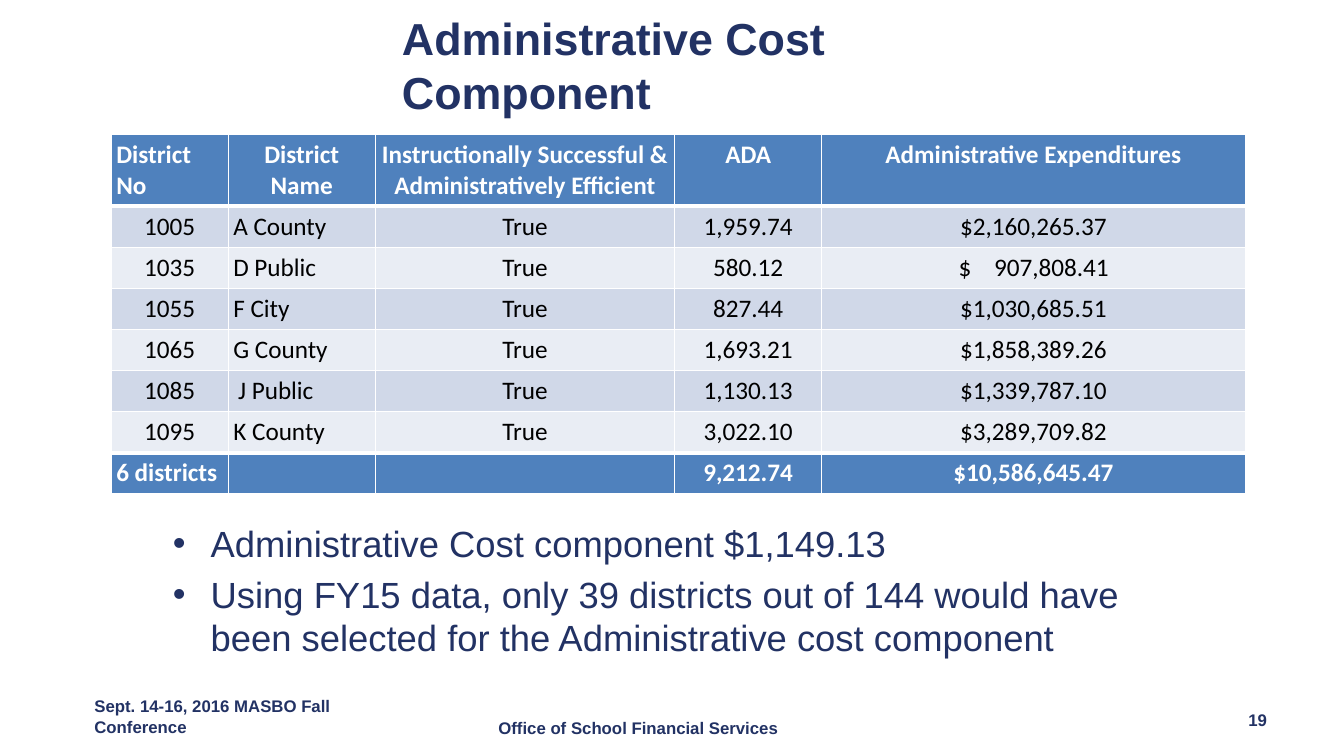
from dataclasses import dataclass

from lxml import etree
from pptx import Presentation
from pptx.dml.color import RGBColor
from pptx.enum.text import MSO_ANCHOR, PP_ALIGN
from pptx.oxml.ns import qn
from pptx.util import Cm, Pt

LEFT, CENTER, RIGHT = PP_ALIGN.LEFT, PP_ALIGN.CENTER, PP_ALIGN.RIGHT
TOP, MIDDLE = MSO_ANCHOR.TOP, MSO_ANCHOR.MIDDLE


@dataclass(frozen=True)
class Theme:
    navy: str = "223264"
    blue: str = "4F81BD"
    band_dark: str = "D0D8E8"
    band_light: str = "E9EDF4"
    white: str = "FFFFFF"
    black: str = "000000"
    heading_font: str = "Arial"
    table_font: str = "Calibri"
    title_size: int = 32
    body_size: int = 26
    table_size: int = 18
    footer_size: int = 12
    thin_rule: int = 1
    thick_rule: int = 3


HEADER = ["District No", "District Name",
          "Instructionally Successful & Administratively Efficient",
          "ADA", "Administrative Expenditures"]
DISTRICTS = [
    ["1005", "A County", "True", "1,959.74", "$2,160,265.37"],
    ["1035", "D Public", "True", "580.12", "$\t907,808.41"],
    ["1055", "F City", "True", "827.44", "$1,030,685.51"],
    ["1065", "G County", "True", "1,693.21", "$1,858,389.26"],
    ["1085", "J Public", "True", "1,130.13", "$1,339,787.10"],
    ["1095", "K County", "True", "3,022.10", "$3,289,709.82"],
]
TOTAL = ["6 districts", "", "", "9,212.74", "$10,586,645.47"]
COLUMN_WIDTHS = [2.95, 3.71, 7.54, 3.71, 10.67]
HEADER_HEIGHT, ROW_HEIGHT = 1.8, 1.03
CELL_INSET, WIDE_INSET = 0.13, 0.25
AMOUNT_INSET, AMOUNT_TAB = 3.45, 0.89


def write(paragraph, text, *, font, size, color, bold=False, align=LEFT,
          before=0, hanging=None, tab=None):
    """Fill one paragraph; hanging (cm) makes it a bullet, tab (cm) sets a stop."""
    paragraph.text = text
    paragraph.alignment = align
    paragraph.space_before = Pt(before)
    properties = paragraph._p.get_or_add_pPr()
    if hanging:
        properties.set("marL", str(Cm(hanging)))
        properties.set("indent", str(-Cm(hanging)))
        etree.SubElement(properties, qn("a:buFont"), typeface=font)
        etree.SubElement(properties, qn("a:buChar"), char="•")
    if tab:
        stops = etree.SubElement(properties, qn("a:tabLst"))
        etree.SubElement(stops, qn("a:tab"), pos=str(Cm(tab)), algn="l")
    paragraph.font.name = font
    paragraph.font.size = Pt(size)
    paragraph.font.bold = bold
    paragraph.font.color.rgb = RGBColor.from_string(color)


class SlideBuilder:
    def __init__(self, slide, theme):
        self.slide = slide
        self.theme = theme

    def text(self, left, top, width, height, lines, *, anchor=TOP, gap=0,
             **style):
        box = self.slide.shapes.add_textbox(Cm(left), Cm(top), Cm(width), Cm(height))
        frame = box.text_frame
        frame.word_wrap = True
        frame.vertical_anchor = anchor
        for index, line in enumerate(lines):
            paragraph = frame.add_paragraph() if index else frame.paragraphs[0]
            write(paragraph, line, before=gap if index else 0,
                  font=self.theme.heading_font, color=self.theme.navy, **style)

    def footer(self, left, top, line, align=LEFT):
        self.text(left, top, 7.9, 1.4, [line], anchor=MIDDLE, align=align,
                  size=self.theme.footer_size, bold=True)

    def borders(self, cell, **widths):
        """Draw white cell edges, with widths in points by side."""
        properties = cell._tc.get_or_add_tcPr()
        for position, side in enumerate("LRTB"):
            width = widths.get(side, self.theme.thin_rule)
            edge = etree.Element(qn(f"a:ln{side}"), w=str(Pt(width)))
            fill = etree.SubElement(edge, qn("a:solidFill"))
            etree.SubElement(fill, qn("a:srgbClr"), val=self.theme.white)
            properties.insert(position, edge)

    def cell(self, cell, value, *, fill, edges, inset=CELL_INSET, **style):
        cell.margin_left = Cm(inset)
        cell.margin_right = cell.margin_top = cell.margin_bottom = Cm(CELL_INSET)
        cell.fill.solid()
        cell.fill.fore_color.rgb = RGBColor.from_string(fill)
        self.borders(cell, **edges)
        write(cell.text_frame.paragraphs[0], value, font=self.theme.table_font,
              size=self.theme.table_size, **style)

    def district_table(self, left, top):
        theme = self.theme
        rows = [HEADER, *DISTRICTS, TOTAL]
        last = len(rows) - 1
        height = HEADER_HEIGHT + last * ROW_HEIGHT
        table = self.slide.shapes.add_table(
            len(rows), len(HEADER), Cm(left), Cm(top),
            Cm(sum(COLUMN_WIDTHS)), Cm(height)).table
        for column, width in zip(table.columns, COLUMN_WIDTHS):
            column.width = Cm(width)
        for r, row in enumerate(rows):
            table.rows[r].height = Cm(ROW_HEIGHT if r else HEADER_HEIGHT)
            strong = r in (0, last)
            band = theme.band_dark if r % 2 else theme.band_light
            edges = {}
            if r in (0, last - 1):
                edges["B"] = theme.thick_rule
            if r in (1, last):
                edges["T"] = theme.thick_rule
            for c, value in enumerate(row):
                flush_left = c == 0 if strong else c == 1
                layout = {"align": LEFT if flush_left else CENTER}
                if "\t" in value:
                    layout = {"inset": AMOUNT_INSET, "tab": AMOUNT_TAB}
                elif value == "J Public":
                    layout["inset"] = WIDE_INSET
                self.cell(table.cell(r, c), value, edges=edges, bold=strong,
                          fill=theme.blue if strong else band,
                          color=theme.white if strong else theme.black, **layout)


def main():
    deck = Presentation()
    deck.slide_width, deck.slide_height = Cm(33.87), Cm(19.05)
    theme = Theme()
    page = SlideBuilder(deck.slides.add_slide(deck.slide_layouts[6]), theme)

    page.district_table(2.8, 3.38)
    page.text(4.11, 13, 26.5, 4.1,
              ["Administrative Cost component $1,149.13",
               "Using FY15 data, only 39 districts out of 144 would have been "
               "selected for the Administrative cost component"],
              size=theme.body_size, gap=5.2, hanging=0.95)
    page.text(9.88, 0.15, 14.95, 2.98, ["Administrative Cost Component"],
              size=theme.title_size, bold=True)
    page.footer(12.31, 17.65, "Office of School Financial Services")
    page.footer(2.13, 17.35, "Sept. 14-16, 2016 MASBO Fall Conference")
    page.footer(24.28, 17.45, "19", align=RIGHT)
    deck.save("out.pptx")


if __name__ == "__main__":
    main()
